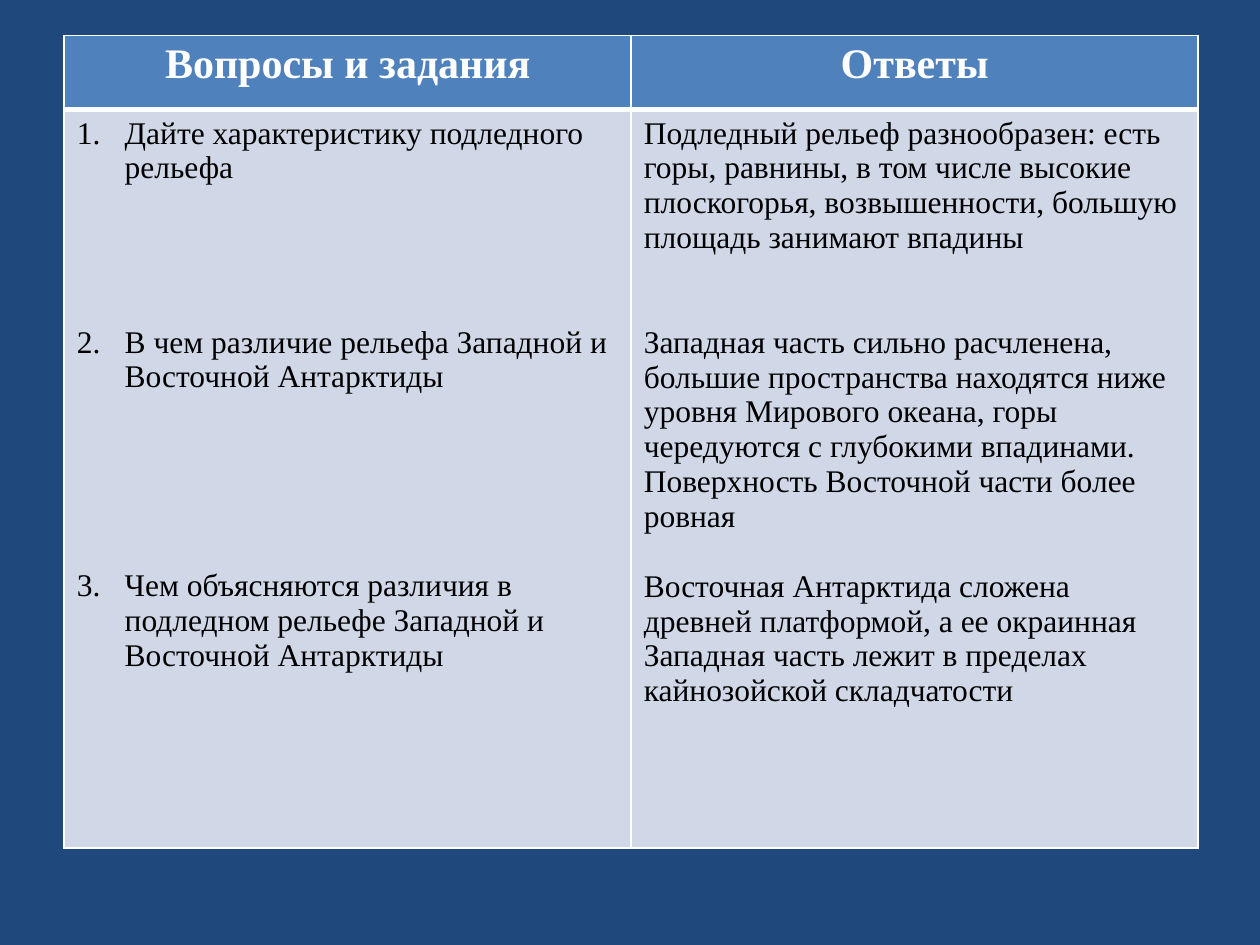
from lxml import etree
from pptx import Presentation
from pptx.dml.color import RGBColor
from pptx.enum.text import PP_ALIGN
from pptx.oxml.ns import qn
from pptx.util import Inches, Pt

CENTER, LEFT = PP_ALIGN.CENTER, PP_ALIGN.LEFT

HEADERS = ["Вопросы и задания", "Ответы"]
QUESTIONS = [
    ("Дайте характеристику подледного рельефа", 0),
    ("В чем различие рельефа Западной и Восточной Антарктиды", 4),
    ("Чем объясняются различия в подледном рельефе Западной и Восточной Антарктиды", 5),
]
ANSWERS = [
    ("Подледный рельеф разнообразен: есть горы, равнины, в том числе высокие "
     "плоскогорья, возвышенности, большую площадь занимают впадины", 0),
    ("Западная часть сильно расчленена, большие пространства находятся ниже уровня "
     "Мирового океана, горы чередуются с глубокими впадинами. Поверхность "
     "Восточной части более ровная", 2),
    ("Восточная Антарктида сложена древней платформой, а ее окраинная Западная "
     "часть лежит в пределах кайнозойской складчатости", 1),
]
COLORS = {"background": "1F497D", "header": "4F81BD", "body": "D0D8E8",
          "light": "FFFFFF", "dark": "000000"}
FONT = "Times New Roman"
HEADER_SIZE, BODY_SIZE = 24, 18
LINE_HEIGHT = 19.9
NUMBER_INDENT = Inches(0.38)
TABLE_LEFT, TABLE_TOP, COLUMN_WIDTH = 0.51, 0.28, 4.5
ROW_HEIGHTS = [0.59, 5.86]
THIN, THICK = 1, 3


def color(name):
    return RGBColor.from_string(COLORS[name])


def style_cell(cell, fill_name, top, bottom):
    properties = cell._tc.get_or_add_tcPr()
    for side, width in (("L", THIN), ("R", THIN), ("T", top), ("B", bottom)):
        line = etree.SubElement(properties, qn(f"a:ln{side}"), w=str(Pt(width)))
        fill = etree.SubElement(line, qn("a:solidFill"))
        etree.SubElement(fill, qn("a:srgbClr"), val=COLORS["light"])
    cell.fill.solid()
    cell.fill.fore_color.rgb = color(fill_name)


def number_paragraph(paragraph):
    properties = paragraph._p.get_or_add_pPr()
    properties.set("marL", str(NUMBER_INDENT))
    properties.set("indent", str(-NUMBER_INDENT))
    etree.SubElement(properties, qn("a:buFont"), typeface="+mj-lt")
    etree.SubElement(properties, qn("a:buAutoNum"), type="arabicPeriod")


def write_cell(cell, items, size, color_name, bold=False, alignment=LEFT, numbered=False):
    frame = cell.text_frame
    frame.text = "\n".join(text for text, _ in items)
    for paragraph, (_, gap_lines) in zip(frame.paragraphs, items):
        if numbered:
            number_paragraph(paragraph)
        paragraph.alignment = alignment
        if gap_lines:
            paragraph.space_before = Pt(gap_lines * LINE_HEIGHT)
        font = paragraph.font
        font.name, font.size, font.bold = FONT, Pt(size), bold
        font.color.rgb = color(color_name)


def main():
    presentation = Presentation()
    presentation.slide_width, presentation.slide_height = Inches(10), Inches(7.5)
    slide = presentation.slides.add_slide(presentation.slide_layouts[6])
    slide.background.fill.solid()
    slide.background.fill.fore_color.rgb = color("background")

    table = slide.shapes.add_table(
        len(ROW_HEIGHTS), len(HEADERS), Inches(TABLE_LEFT), Inches(TABLE_TOP),
        Inches(COLUMN_WIDTH * len(HEADERS)), Inches(sum(ROW_HEIGHTS))).table
    table.horz_banding = False
    for row, height in zip(table.rows, ROW_HEIGHTS):
        row.height = Inches(height)

    for column, (header, items) in enumerate(zip(HEADERS, (QUESTIONS, ANSWERS))):
        header_cell, body_cell = table.cell(0, column), table.cell(1, column)
        style_cell(header_cell, "header", THIN, THICK)
        write_cell(header_cell, [(header, 0)], HEADER_SIZE, "light", True, CENTER)
        style_cell(body_cell, "body", THICK, THIN)
        write_cell(body_cell, items, BODY_SIZE, "dark", numbered=items is QUESTIONS)

    presentation.save("out.pptx")


if __name__ == "__main__":
    main()
